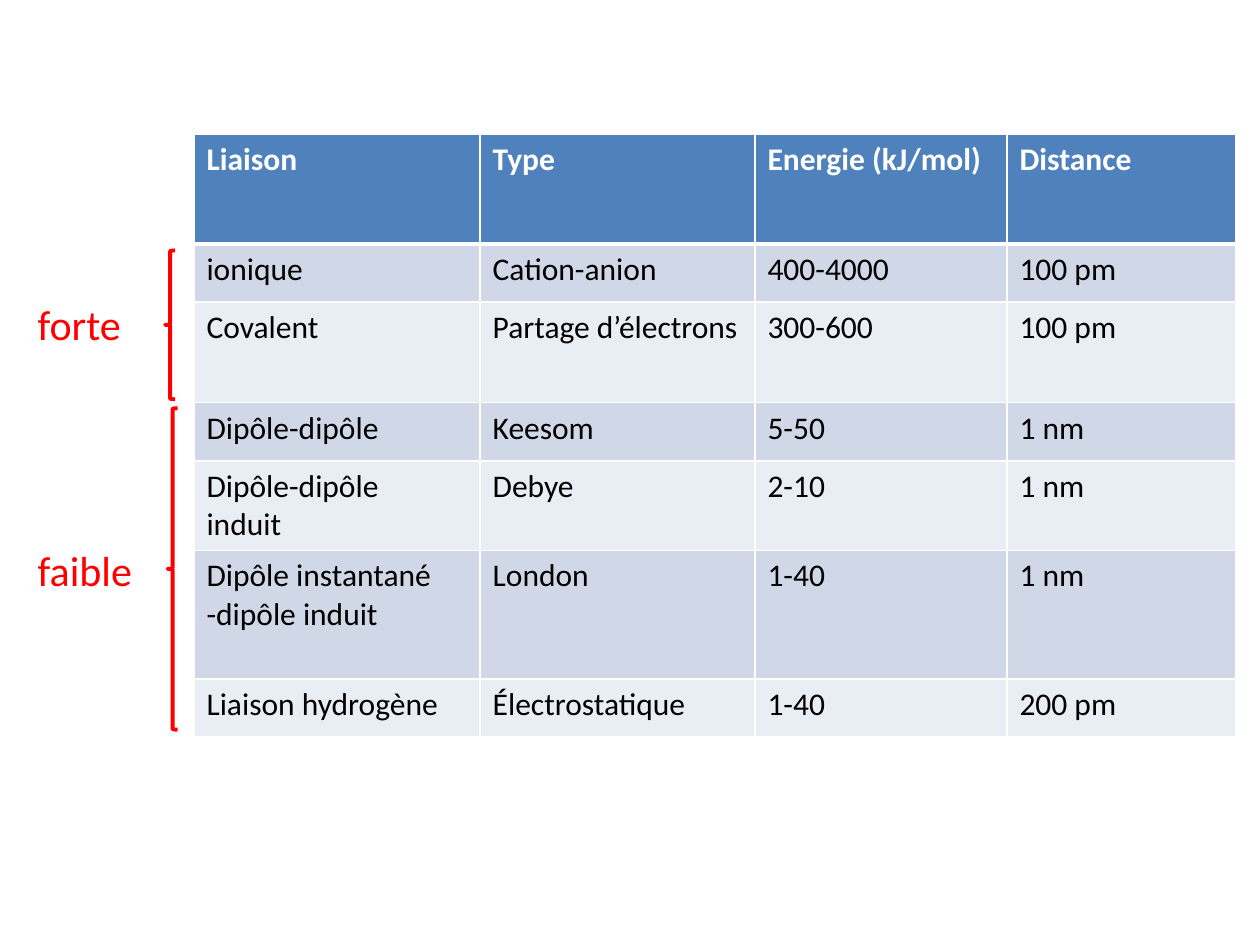
from dataclasses import dataclass

from lxml import etree
from pptx import Presentation
from pptx.dml.color import RGBColor
from pptx.enum import shapes, text
from pptx.oxml import ns
from pptx.util import Cm, Pt

FONT = "Calibri"
RED, WHITE, BLACK = "FF0000", "FFFFFF", "000000"
HEADER_FILL = "4F81BD"
BAND_FILLS = ("D0D8E8", "E9EDF4")

COLUMN_WIDTHS = (5.77, 5.54, 5.08, 4.62)
ROW_HEIGHTS = (2.22, 1.17, 2.03, 1.17, 1.81, 2.59, 1.17)
BONDS = (
    ("Liaison", "Type", "Energie (kJ/mol)", "Distance"),
    ("ionique", "Cation-anion", "400-4000", "100 pm"),
    ("Covalent", "Partage d’électrons", "300-600", "100 pm"),
    ("Dipôle-dipôle", "Keesom", "5-50", "1 nm"),
    ("Dipôle-dipôle\ninduit", "Debye", "2-10", "1 nm"),
    ("Dipôle instantané -dipôle induit", "London", "1-40", "1 nm"),
    ("Liaison hydrogène", "Électrostatique", "1-40", "200 pm"),
)


@dataclass
class Box:
    left: float
    top: float
    width: float
    height: float

    def lengths(self) -> tuple:
        return Cm(self.left), Cm(self.top), Cm(self.width), Cm(self.height)


@dataclass
class Strength:
    """A named group of table rows, marked by a brace."""
    name: str
    label: Box
    brace: Box
    wrap: bool


STRENGTHS = (
    Strength("forte", Box(0.51, 5.89, 4.6, 1.27), Box(3.33, 5.05, 0.2, 3), True),
    Strength("faible", Box(0.51, 10.85, 2.44, 1.27), Box(3.38, 8.23, 0.2, 6.48), False),
)


def rgb(color: str) -> RGBColor:
    return RGBColor.from_string(color)


def style_text(tf, size: float, color: str, bold: bool = False) -> None:
    for p in tf.paragraphs:
        p.font.name = FONT
        p.font.size = Pt(size)
        p.font.bold = bold
        p.font.color.rgb = rgb(color)


def add_borders(cell, top: float, bottom: float) -> None:
    """Draw white cell borders; must run before the cell is filled."""
    tc_pr = cell._tc.get_or_add_tcPr()
    for side, width in (("L", 1), ("R", 1), ("T", top), ("B", bottom)):
        ln = etree.SubElement(tc_pr, ns.qn(f"a:ln{side}"), w=str(Pt(width)))
        fill = etree.SubElement(ln, ns.qn("a:solidFill"))
        etree.SubElement(fill, ns.qn("a:srgbClr"), val=WHITE)


def add_bond_table(s, left: float, top: float) -> None:
    box = Box(left, top, sum(COLUMN_WIDTHS), sum(ROW_HEIGHTS))
    table = s.shapes.add_table(len(BONDS), len(COLUMN_WIDTHS), *box.lengths()).table
    for column, width in zip(table.columns, COLUMN_WIDTHS):
        column.width = Cm(width)
    for i, (row, height, values) in enumerate(zip(table.rows, ROW_HEIGHTS, BONDS)):
        row.height = Cm(height)
        header = i == 0
        for cell, value in zip(row.cells, values):
            cell.text = value
            style_text(cell.text_frame, 18, WHITE if header else BLACK, header)
            add_borders(cell, 3 if i == 1 else 1, 3 if header else 1)
            cell.fill.solid()
            cell.fill.fore_color.rgb = rgb(HEADER_FILL if header else BAND_FILLS[(i - 1) % 2])


def add_brace(s, box: Box) -> None:
    sp = s.shapes.add_shape(shapes.MSO_SHAPE.LEFT_BRACE, *box.lengths())
    sp.shadow.inherit = False
    sp.fill.background()
    sp.line.color.rgb = rgb(RED)
    sp.line.width = Pt(2.25)


def add_label(s, strength: Strength) -> None:
    tf = s.shapes.add_textbox(*strength.label.lengths()).text_frame
    tf.word_wrap = strength.wrap
    tf.auto_size = text.MSO_AUTO_SIZE.SHAPE_TO_FIT_TEXT
    tf.text = strength.name
    style_text(tf, 24, RED)


def main() -> None:
    prs = Presentation()
    prs.slide_width, prs.slide_height = Cm(25.4), Cm(19.05)
    s = prs.slides.add_slide(prs.slide_layouts[6])
    add_bond_table(s, 3.91, 2.7)
    for strength in STRENGTHS:
        add_brace(s, strength.brace)
    for strength in STRENGTHS:
        add_label(s, strength)
    prs.save("out.pptx")


if __name__ == "__main__":
    main()
